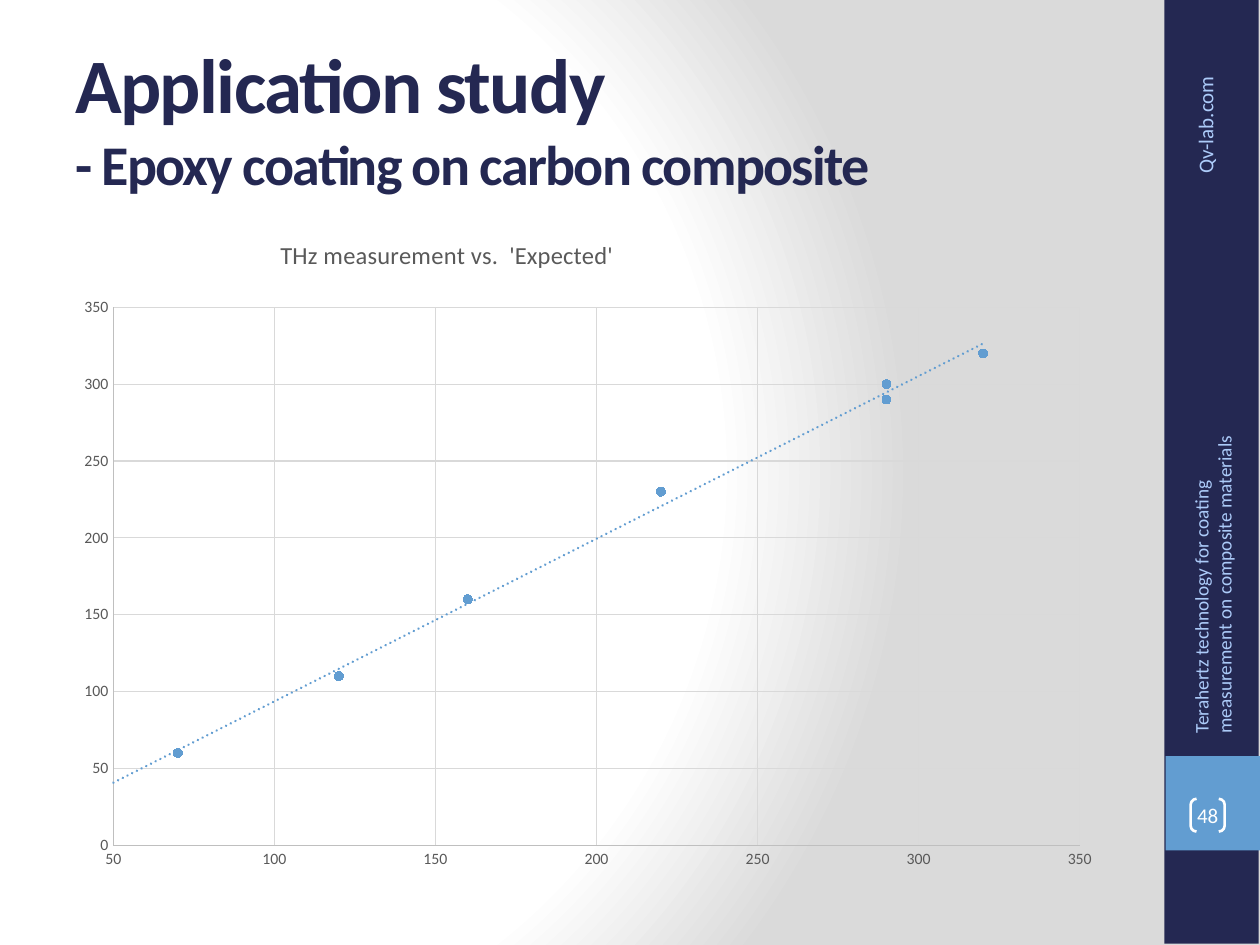
from lxml.etree import SubElement
from pptx import Presentation
from pptx.chart.data import XyChartData
from pptx.dml.color import RGBColor
from pptx.enum.chart import XL_CHART_TYPE, XL_MARKER_STYLE, XL_TICK_MARK
from pptx.enum.shapes import MSO_SHAPE
from pptx.enum.text import MSO_ANCHOR, PP_ALIGN
from pptx.oxml import parse_xml
from pptx.oxml.ns import nsdecls, qn
from pptx.util import Inches, Pt

COLORS = {"navy": "242852", "blue": "629DD1", "pale": "ACCBF9", "white": "FFFFFF",
          "shade": "DADADA", "text": "595959", "axis": "BFBFBF", "grid": "D9D9D9"}
FONT = "Calibri"
POINTS = [(70, 60), (120, 110), (160, 160), (220, 230), (290, 300), (290, 290), (320, 320)]


def rgb(name):
    return RGBColor.from_string(COLORS[name])


def set_font(font, size, color, bold=False):
    for key, value in {"name": FONT, "size": Pt(size), "bold": bold}.items():
        setattr(font, key, value)
    font.color.rgb = rgb(color)


def set_line(line, color, width=0.75):
    line.color.rgb = rgb(color)
    line.width = Pt(width)


def set_background(slide):
    """Fill the slide with a circular gradient centred left of the middle."""
    stops = "".join(f'<a:gs pos="{pos}"><a:srgbClr val="{COLORS[c]}"/></a:gs>'
                    for pos, c in ((0, "white"), (75000, "white"), (100000, "shade")))
    slide.background.fill.solid()
    solid = slide.background._cSld.find(".//" + qn("a:solidFill"))
    solid.getparent().replace(solid, parse_xml(
        f'<a:gradFill {nsdecls("a")} rotWithShape="1"><a:gsLst>{stops}</a:gsLst>'
        '<a:path path="circle"><a:fillToRect l="20000" t="50000" r="100000" b="50000"/>'
        '</a:path></a:gradFill>'))


def add_block(slide, box, color):
    sp = slide.shapes.add_shape(MSO_SHAPE.RECTANGLE, *map(Inches, box))
    sp.shadow.inherit = False
    sp.fill.solid()
    sp.fill.fore_color.rgb = rgb(color)
    sp.line.fill.background()


def add_run(p, text, size, color, bold=False):
    r = p.add_run()
    r.text = text
    set_font(r.font, size, color, bold)
    return r


def add_side_text(slide, box, text, size):
    """Add text that reads upwards along the side bar."""
    sp = slide.shapes.add_textbox(*map(Inches, box))
    sp.rotation = 270
    sp.text_frame.word_wrap = True
    add_run(sp.text_frame.paragraphs[0], text, size, "pale")


def add_title(slide, box, lines):
    sp = slide.shapes.add_textbox(*map(Inches, box))
    tf = sp.text_frame
    tf.word_wrap = True
    tf.vertical_anchor = MSO_ANCHOR.MIDDLE
    p = tf.paragraphs[0]
    for i, (text, size) in enumerate(lines):
        if i:
            p.add_line_break()
        r = add_run(p, text, size, "navy", True)
        r.font._element.set("spc", "-100")


def add_page_number(slide, box, text):
    sp = slide.shapes.add_shape(MSO_SHAPE.DOUBLE_BRACKET, *map(Inches, box))
    sp.shadow.inherit = False
    sp.adjustments[0] = 0.18
    sp.fill.background()
    set_line(sp.line, "white", 1.5)
    tf = sp.text_frame
    for side in ("left", "right", "top", "bottom"):
        setattr(tf, f"margin_{side}", 0)
    tf.word_wrap = False
    tf.vertical_anchor = MSO_ANCHOR.MIDDLE
    tf.paragraphs[0].alignment = PP_ALIGN.CENTER
    add_run(tf.paragraphs[0], text, 12, "white")


def set_layout(parent, chart_size, **inches):
    """Fix the place of a chart title or plot area, in inches within the chart."""
    layout = parent.find(qn("c:layout"))
    if layout is None:
        layout = parse_xml(f'<c:layout {nsdecls("c")}/>')
        tx = parent.find(qn("c:tx"))
        if tx is None:
            parent.insert(0, layout)
        else:
            tx.addnext(layout)
    manual = SubElement(layout, qn("c:manualLayout"))
    if "w" in inches:
        SubElement(manual, qn("c:layoutTarget")).set("val", "inner")
    for mode in ("xMode", "yMode"):
        SubElement(manual, qn(f"c:{mode}")).set("val", "edge")
    width, height = chart_size
    for key, value in inches.items():
        share = value / (width if key in "xw" else height)
        SubElement(manual, qn(f"c:{key}")).set("val", str(share))


def format_axis(axis, low, high):
    settings = {"minimum_scale": low, "maximum_scale": high, "major_unit": 50,
                "has_major_gridlines": True, "major_tick_mark": XL_TICK_MARK.NONE,
                "minor_tick_mark": XL_TICK_MARK.NONE}
    for key, value in settings.items():
        setattr(axis, key, value)
    set_font(axis.tick_labels.font, 9, "text")
    set_line(axis.format.line, "axis")
    set_line(axis.major_gridlines.format.line, "grid")


def add_trendline(series, backward):
    series._element.find(qn("c:xVal")).addprevious(parse_xml(
        f'<c:trendline {nsdecls("c", "a")}><c:spPr><a:ln w="19050" cap="rnd"><a:solidFill>'
        f'<a:srgbClr val="{COLORS["blue"]}"/></a:solidFill><a:prstDash val="sysDot"/></a:ln>'
        f'</c:spPr><c:trendlineType val="linear"/><c:backward val="{backward}"/>'
        '<c:dispRSqr val="0"/><c:dispEq val="0"/></c:trendline>'))


def add_scatter(slide, box, title):
    data = XyChartData()
    points = data.add_series("Series 1")
    for x, y in POINTS:
        points.add_data_point(x, y)
    chart = slide.shapes.add_chart(XL_CHART_TYPE.XY_SCATTER, *map(Inches, box), data).chart
    chart.has_legend = False
    chart.font.name, chart.font.size = FONT, Pt(10)
    chart.has_title = True
    add_run(chart.chart_title.text_frame.paragraphs[0], title, 14, "text")
    size = box[2:]
    set_layout(chart.chart_title._element, size, x=1.69, y=0.1)
    set_layout(chart._chartSpace.chart.plotArea, size, x=0.4, y=0.69, w=7.67, h=4.27)
    format_axis(chart.category_axis, 50, 350)
    format_axis(chart.value_axis, 0, 350)
    plot = chart.plots[0]
    plot.vary_by_categories = False
    series = plot.series[0]
    series.smooth = False
    series.format.line.fill.background()
    marker = series.marker
    marker.style, marker.size = XL_MARKER_STYLE.CIRCLE, 5
    marker.format.fill.solid()
    marker.format.fill.fore_color.rgb = rgb("blue")
    set_line(marker.format.line, "blue")
    add_trendline(series, 20)


def main():
    prs = Presentation()
    prs.slide_width, prs.slide_height = Inches(10), Inches(7.5)
    slide = prs.slides.add_slide(prs.slide_layouts[6])
    set_background(slide)
    add_block(slide, (9.24, -0.01, 0.75, 7.5), "navy")
    add_block(slide, (9.25, 6, 0.75, 0.75), "blue")
    add_side_text(slide, (8.74, 0.5, 1.65, 0.3), "Qv-lab.com", 12)
    add_title(slide, (0.5, 0.3, 8.33, 1.25),
              [("Application study", 44), ("- Epoxy coating on carbon composite", 32)])
    add_side_text(slide, (8.11, 4.24, 2.96, 0.4),
                  "Terahertz technology for coating measurement on composite materials", 11)
    add_page_number(slide, (9.45, 6.34, 0.27, 0.26), "48")
    add_scatter(slide, (0.5, 1.75, 8.33, 5.25), "THz measurement vs.  'Expected'")
    prs.save("out.pptx")


if __name__ == "__main__":
    main()
